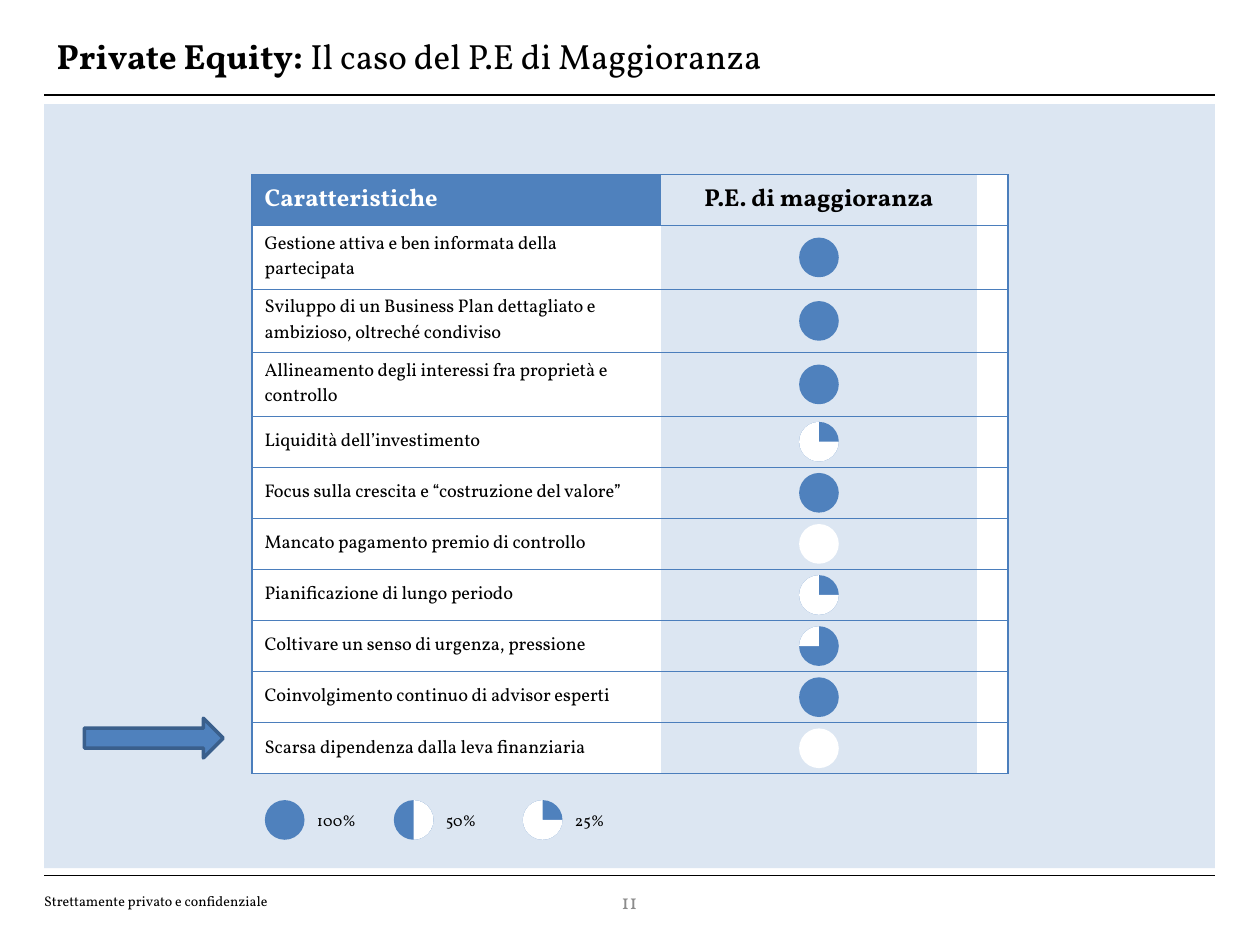
from dataclasses import dataclass

from lxml import etree
from pptx import Presentation
from pptx.dml.color import RGBColor
from pptx.enum import shapes, text
from pptx.oxml.ns import qn
from pptx.util import Cm, Pt


@dataclass(frozen=True)
class Theme:
    """Colours, font and type sizes of the slide."""
    font: str = "Vollkorn"
    black: str = "000000"
    white: str = "FFFFFF"
    grey: str = "8C8C8C"
    blue: str = "4F81BD"
    pale: str = "DCE6F2"
    border: str = "4B7EBC"
    outline: str = "3A5F8C"
    title: float = 20
    header: float = 14
    page: float = 12
    body: float = 10.5
    legend: float = 9
    footer: float = 8


THEME = Theme()
CIRCLE = 0.8
ROW = 1.03
TALL_ROW = 1.28
WHITE_SECTORS = {25: (0, 270), 50: (270, 90), 75: (180, 270)}
FEATURES = [
    ("Gestione attiva e ben informata della partecipata", 100, TALL_ROW),
    ("Sviluppo di un Business Plan dettagliato e ambizioso, oltreché condiviso", 100, TALL_ROW),
    ("Allineamento degli interessi fra proprietà e controllo", 100, TALL_ROW),
    ("Liquidità dell’investimento", 25, ROW),
    ("Focus sulla crescita e “costruzione del valore”", 100, ROW),
    ("Mancato pagamento premio di controllo", 0, ROW),
    ("Pianificazione di lungo periodo", 25, ROW),
    ("Coltivare un senso di urgenza, pressione", 75, ROW),
    ("Coinvolgimento continuo di advisor esperti", 100, ROW),
    ("Scarsa dipendenza dalla leva finanziaria", 0, ROW),
]


def write(paragraph, words, size, color=THEME.black, bold=False):
    """Append a formatted run to a paragraph."""
    run = paragraph.add_run()
    run.text = words
    values = {"name": THEME.font, "size": Pt(size), "bold": bold}
    for name, value in values.items():
        setattr(run.font, name, value)
    run.font.color.rgb = RGBColor.from_string(color)


def add_text(slide, box, runs, align=text.PP_ALIGN.LEFT):
    """Place one line of text, given as argument tuples for its runs."""
    frame = slide.shapes.add_textbox(*map(Cm, box)).text_frame
    values = {"word_wrap": True, "vertical_anchor": text.MSO_ANCHOR.MIDDLE}
    for name, value in values.items():
        setattr(frame, name, value)
    paragraph = frame.paragraphs[0]
    paragraph.alignment = align
    for run in runs:
        write(paragraph, *run)


def add_shape(slide, kind, box, fill, outline=None):
    """Place a flat preset shape, with an outline if one is named."""
    shape = slide.shapes.add_shape(kind, *map(Cm, box))
    shape.shadow.inherit = False
    shape.fill.solid()
    shape.fill.fore_color.rgb = RGBColor.from_string(fill)
    if outline:
        shape.line.color.rgb = RGBColor.from_string(outline)
        shape.line.width = Pt(2)
    else:
        shape.line.fill.background()
    return shape


def add_rule(slide, left, top, width):
    """Draw a thin horizontal rule."""
    rule = slide.shapes.add_connector(
        shapes.MSO_CONNECTOR.STRAIGHT, Cm(left), Cm(top), Cm(left + width), Cm(top))
    rule.line.color.rgb = RGBColor.from_string(THEME.black)
    rule.line.width = Pt(1)
    etree.SubElement(rule._element.spPr, qn("a:effectLst"))


def add_score(slide, left, top, percent):
    """Draw a disc filled to a percentage."""
    box = (left, top, CIRCLE, CIRCLE)
    fill = THEME.blue if percent else THEME.white
    add_shape(slide, shapes.MSO_SHAPE.OVAL, box, fill)
    if percent in WHITE_SECTORS:
        sector = add_shape(slide, shapes.MSO_SHAPE.PIE, box, THEME.white)
        for index, angle in enumerate(WHITE_SECTORS[percent]):
            sector.adjustments[index] = angle * 0.6


def set_borders(cell, visible):
    """Draw the visible sides of a cell and clear the others."""
    properties = cell._tc.get_or_add_tcPr()
    for index, side in enumerate("LRTB"):
        line = etree.Element(qn(f"a:ln{side}"), w=str(Pt(0.75)))
        if side in visible:
            fill = etree.SubElement(line, qn("a:solidFill"))
            etree.SubElement(fill, qn("a:srgbClr"), val=THEME.border)
        else:
            etree.SubElement(line, qn("a:noFill"))
        properties.insert(index, line)


def add_frame(slide, left, top, width, height):
    """Draw the background panel, its rules, and the title and footer."""
    add_shape(slide, shapes.MSO_SHAPE.RECTANGLE, (left, top, width, height), THEME.pale)
    for rule_top in (top - 0.18, top + height + 0.15):
        add_rule(slide, left, rule_top, width)
    add_text(slide, (left, top - 1.59, 22.86, 1.2), [
        ("Private Equity: ", THEME.title, THEME.black, True),
        ("Il caso del P.E di Maggioranza", THEME.title)])
    add_text(slide, (left - 0.25, top + height + 0.38, 10.41, 0.58),
             [("Strettamente privato e confidenziale", THEME.footer)])
    add_text(slide, (left + 8.84, top + height + 0.15, 5.92, 1.02),
             [("11", THEME.page, THEME.grey)], text.PP_ALIGN.CENTER)


def add_features(slide, left, top, width):
    """Build the table of features with a score disc centred in each row."""
    widths = (8.24, 6.38, width - 14.62)
    labels = ["Caratteristiche"] + [feature[0] for feature in FEATURES]
    heights = [ROW] + [feature[2] for feature in FEATURES]
    table = slide.shapes.add_table(
        len(labels), len(widths), *map(Cm, (left, top, width, sum(heights)))).table
    for name in ("first_row", "horz_banding"):
        setattr(table, name, False)
    for column, column_width in zip(table.columns, widths):
        column.width = Cm(column_width)
    for row_index, (label, height) in enumerate(zip(labels, heights)):
        table.rows[row_index].height = Cm(height)
        is_header = row_index == 0
        for column_index, sides in enumerate(("LTB", "TB", "RTB")):
            cell = table.cell(row_index, column_index)
            cell.vertical_anchor = text.MSO_ANCHOR.MIDDLE
            if column_index == 1:
                cell.fill.background()
            else:
                fill = THEME.blue if is_header and column_index == 0 else THEME.white
                cell.fill.solid()
                cell.fill.fore_color.rgb = RGBColor.from_string(fill)
            set_borders(cell, sides)
        write(table.cell(row_index, 0).text_frame.paragraphs[0], label,
              THEME.header if is_header else THEME.body,
              THEME.white if is_header else THEME.black, is_header)
    heading = table.cell(0, 1).text_frame.paragraphs[0]
    heading.alignment = text.PP_ALIGN.CENTER
    write(heading, "P.E. di maggioranza", THEME.header, bold=True)
    score_left = left + widths[0] + (widths[1] - CIRCLE) / 2
    row_top = top + ROW
    for _, percent, height in FEATURES:
        add_score(slide, score_left, row_top + (height - CIRCLE) / 2, percent)
        row_top += height


def add_legend(slide, left, top, step):
    """Explain the discs with evenly spaced samples."""
    for index, percent in enumerate((100, 50, 25)):
        sample_left = left + index * step
        add_score(slide, sample_left, top, percent)
        add_text(slide, (sample_left + CIRCLE, top + 0.08, 1.4, 0.64),
                 [(f"{percent}%", THEME.legend)])


def main():
    """Build and save the slide."""
    presentation = Presentation()
    presentation.slide_width, presentation.slide_height = Cm(25.4), Cm(19.05)
    slide = presentation.slides.add_slide(presentation.slide_layouts[6])
    add_frame(slide, 0.89, 2.1, 23.6, 15.4)
    add_features(slide, 5.08, 3.52, 15.24)
    add_legend(slide, 5.34, 16.13, 2.6)
    add_shape(slide, shapes.MSO_SHAPE.RIGHT_ARROW, (1.7, 14.48, 2.8, 0.8),
              THEME.blue, THEME.outline)
    presentation.save("out.pptx")


if __name__ == "__main__":
    main()
